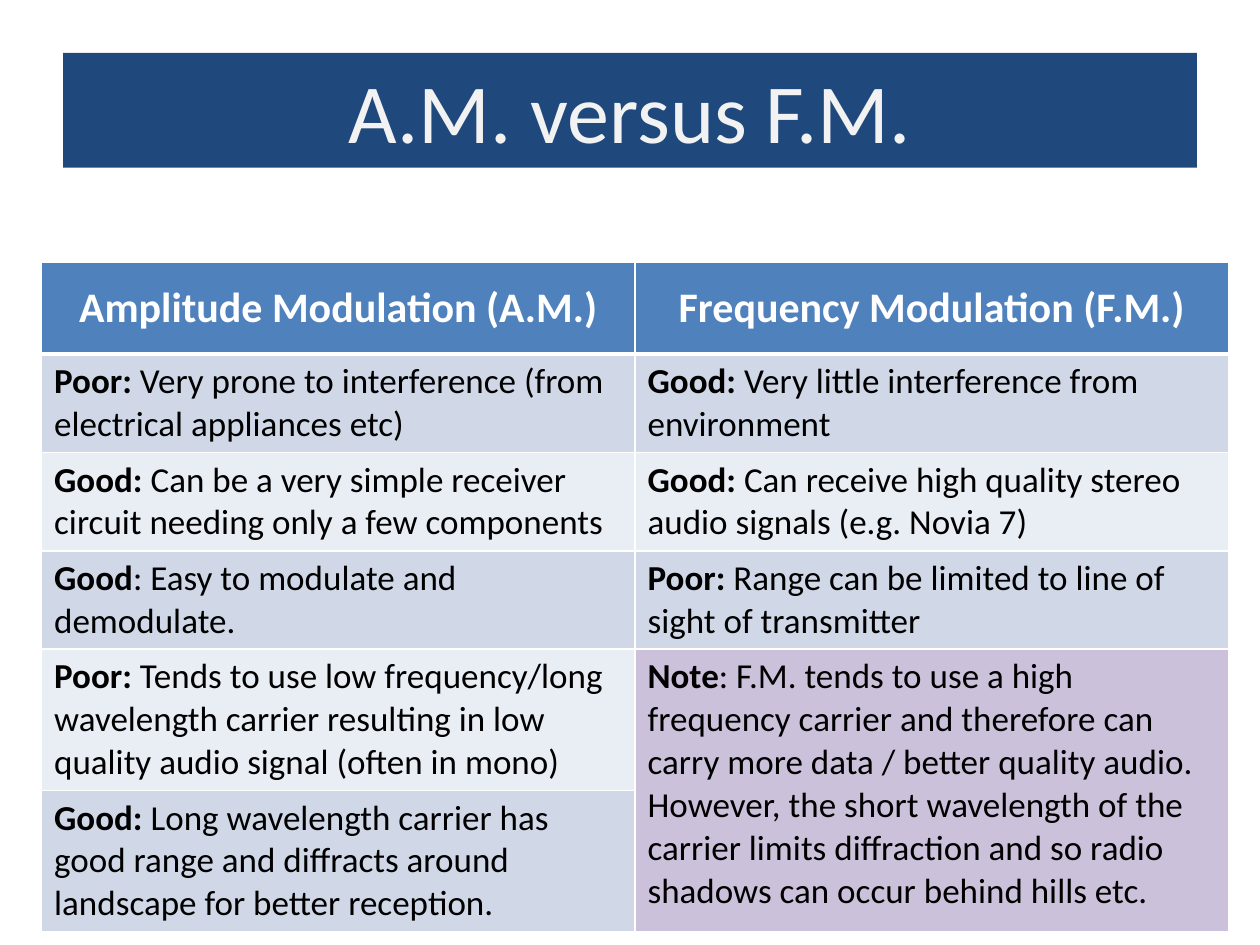
from lxml import etree
from pptx import Presentation
from pptx.dml.color import RGBColor
from pptx.enum.text import MSO_ANCHOR, PP_ALIGN
from pptx.oxml.ns import qn
from pptx.util import Inches, Pt

MIDDLE, TOP = MSO_ANCHOR.MIDDLE, MSO_ANCHOR.TOP
CENTER, LEFT = PP_ALIGN.CENTER, PP_ALIGN.LEFT

TITLE = "A.M. versus F.M."
HEADS = ["Amplitude Modulation (A.M.)", "Frequency Modulation (F.M.)"]
ROWS = [
    [("Poor:", " Very prone to interference (from electrical appliances etc)"),
     ("Good:", " Very little interference from environment")],
    [("Good:", " Can be a very simple receiver circuit needing only a few components"),
     ("Good:", " Can receive high quality stereo audio signals (e.g. Novia 7)")],
    [("Good", ": Easy to modulate and demodulate."),
     ("Poor:", " Range can be limited to line of sight of transmitter")],
    [("Poor:", " Tends to use low frequency/long wavelength carrier resulting in low "
      "quality audio signal (often in mono)"),
     ("Note", ": F.M. tends to use a high frequency carrier and therefore can carry "
      "more data / better quality audio. However, the short wavelength of the carrier "
      "limits diffraction and so radio shadows can occur behind hills etc.")],
    [("Good:", " Long wavelength carrier has good range and diffracts around "
      "landscape for better reception.")],
]
WIDTH, HEIGHT, ROW = 4.71, 5.23, 0.73
BANDS = ["D0D8E8", "E9EDF4"]
HEAD, NOTE, WHITE = "4F81BD", "CCC1DA", "FFFFFF"


def paint(obj, color):
    obj.fill.solid()
    obj.fill.fore_color.rgb = RGBColor.from_string(color)


def write(frame, parts, size=20, color="000000", align=LEFT):
    para = frame.paragraphs[0]
    para.alignment = align
    for text, bold in parts:
        run = para.add_run()
        run.text = text
        font = run.font
        font.name, font.size, font.bold = "Calibri", Pt(size), bold
        font.color.rgb = RGBColor.from_string(color)


def edge(cell, top=1, bottom=1):
    props = cell._tc.get_or_add_tcPr()
    sides = [("L", 1), ("R", 1), ("T", top), ("B", bottom)]
    for spot, (side, width) in enumerate(sides):
        line = etree.Element(qn(f"a:ln{side}"), w=str(Pt(width)))
        fill = etree.SubElement(line, qn("a:solidFill"))
        etree.SubElement(fill, qn("a:srgbClr"), val=WHITE)
        props.insert(spot, line)


def main():
    deck = Presentation()
    deck.slide_width, deck.slide_height = Inches(10), Inches(7.5)
    slide = deck.slides.add_slide(deck.slide_layouts[5])

    title = slide.shapes.title
    title.left, title.top = Inches(0.5), Inches(0.42)
    title.width, title.height = Inches(9), Inches(0.91)
    title.text_frame.vertical_anchor = MIDDLE
    paint(title, "1F497D")
    write(title.text_frame, [(TITLE, False)], size=48, color="F2F2F2", align=CENTER)

    grid = slide.shapes.add_table(
        len(ROWS) + 1, len(HEADS), Inches(0.33), Inches(2.08),
        Inches(WIDTH * len(HEADS)), Inches(HEIGHT))
    table = grid.table
    for col in table.columns:
        col.width = Inches(WIDTH)
    for row in table.rows:
        row.height = Inches(ROW)
    grid.height = Inches(HEIGHT)

    for c, head in enumerate(HEADS):
        cell = table.cell(0, c)
        cell.vertical_anchor = MIDDLE
        paint(cell, HEAD)
        write(cell.text_frame, [(head, True)], size=24, color=WHITE, align=CENTER)
        edge(cell, bottom=3)

    table.cell(4, 1).merge(table.cell(5, 1))
    for r, row in enumerate(ROWS, 1):
        for c in range(len(HEADS)):
            cell = table.cell(r, c)
            cell.vertical_anchor = TOP
            paint(cell, NOTE if c == 1 and r >= 4 else BANDS[(r - 1) % 2])
            edge(cell, top=3 if r == 1 else 1)
        for c, (label, text) in enumerate(row):
            write(table.cell(r, c).text_frame, [(label, True), (text, False)])

    deck.save("out.pptx")


if __name__ == "__main__":
    main()
